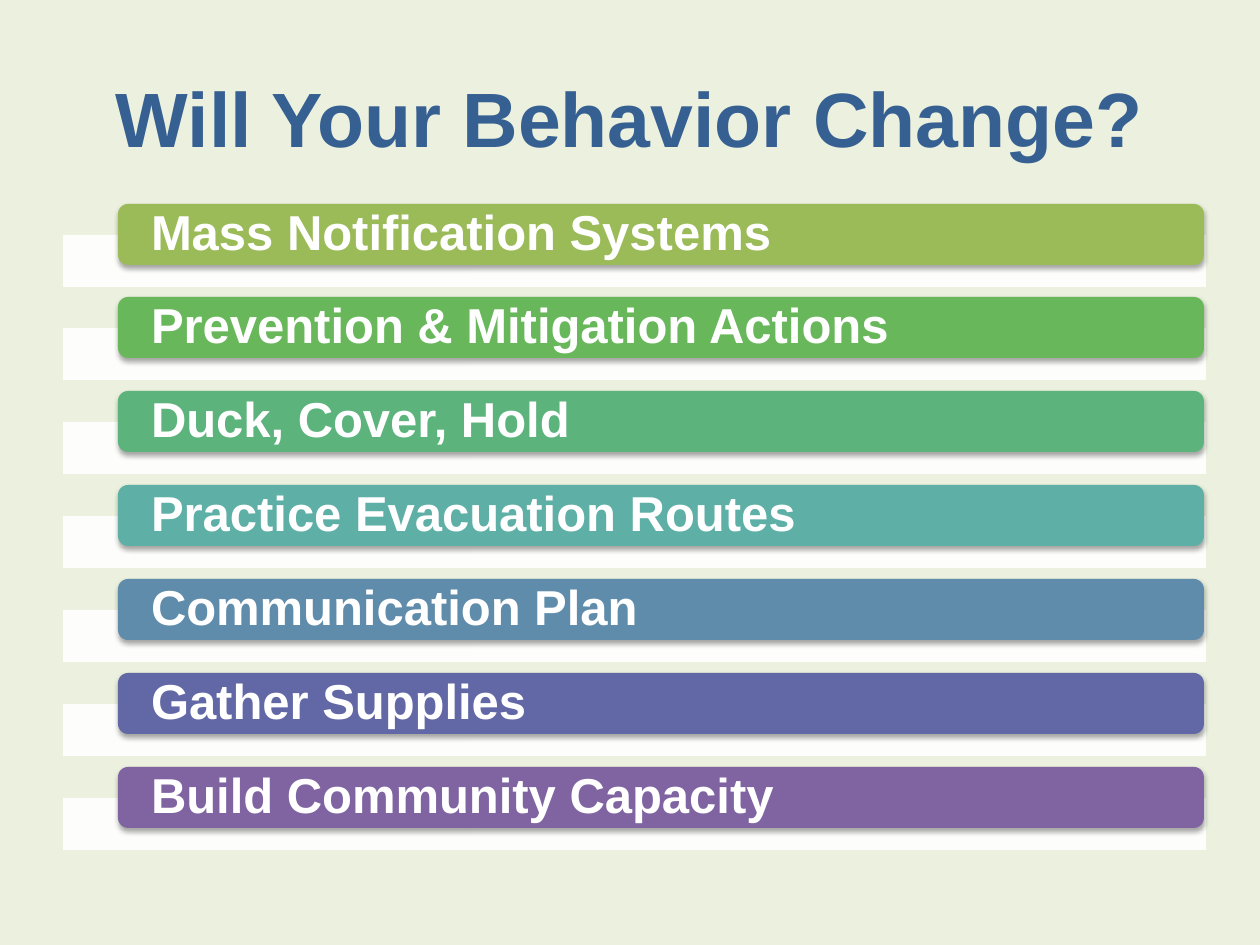
from lxml import etree
from pptx import Presentation
from pptx import util as u
from pptx.dml.color import RGBColor
from pptx.enum import shapes, text
from pptx.oxml import ns

PX = 914400 // 126
FONT = "Arial"
PAPER = RGBColor(0xEB, 0xF1, 0xDE)
NAVY = RGBColor(0x37, 0x60, 0x92)
WHITE = RGBColor(0xFF, 0xFF, 0xFF)
ACTIONS = [
    ("Mass Notification Systems", RGBColor(0x9B, 0xBB, 0x59)),
    ("Prevention & Mitigation Actions", RGBColor(0x69, 0xB7, 0x5B)),
    ("Duck, Cover, Hold", RGBColor(0x5C, 0xB3, 0x7C)),
    ("Practice Evacuation Routes", RGBColor(0x5E, 0xAF, 0xA6)),
    ("Communication Plan", RGBColor(0x60, 0x8C, 0xAB)),
    ("Gather Supplies", RGBColor(0x62, 0x67, 0xA6)),
    ("Build Community Capacity", RGBColor(0x80, 0x64, 0xA2)),
]
FIRST_TOP, LAST_TOP = 204, 767


def px(*lengths):
    return [u.Emu(length * PX) for length in lengths]


def add_span(para, words, size, color):
    span = para.add_run()
    span.text = words
    span.font.name = FONT
    span.font.size = u.Pt(size)
    span.font.bold = True
    span.font.color.rgb = color


def add_title(page, words):
    title = page.shapes.title
    title.left, title.top, title.width, title.height = px(63, 38, 1134, 157)
    title.text_frame.vertical_anchor = text.MSO_ANCHOR.MIDDLE
    para = title.text_frame.paragraphs[0]
    para.alignment = text.PP_ALIGN.CENTER
    add_span(para, words, 44, NAVY)


def add_block(group, kind, place, color):
    block = group.shapes.add_shape(kind, *px(*place))
    block.shadow.inherit = False
    block.fill.solid()
    block.fill.fore_color.rgb = color
    block.line.fill.background()
    return block


def set_alpha(color_element, percent):
    alpha = etree.SubElement(color_element, ns.qn("a:alpha"))
    alpha.set("val", str(percent * 1000))


def add_shadow(block):
    """Cast a soft black shadow straight down."""
    effects = block._element.spPr.find(ns.qn("a:effectLst"))
    shadow = etree.SubElement(
        effects, ns.qn("a:outerShdw"), blurRad=str(u.Pt(3.1)),
        dist=str(u.Pt(1.8)), dir="5400000", rotWithShape="0")
    black = etree.SubElement(shadow, ns.qn("a:srgbClr"), val="000000")
    set_alpha(black, 35)


def add_label(group, place, words):
    box = group.shapes.add_textbox(*px(*place))
    frame = box.text_frame
    frame.word_wrap = True
    frame.vertical_anchor = text.MSO_ANCHOR.MIDDLE
    frame.margin_left, frame.margin_right = px(30, 30)
    frame.margin_top = frame.margin_bottom = 0
    para = frame.paragraphs[0]
    para.line_spacing = 0.9
    add_span(para, words, 28, WHITE)


def add_action(group, top, words, color):
    """Add a white strip with a coloured bar and its label over it."""
    strip = add_block(group, shapes.MSO_SHAPE.RECTANGLE,
                      (63, top + 31, 1143, 52), WHITE)
    set_alpha(strip._element.spPr.find(".//" + ns.qn("a:srgbClr")), 90)
    bar = add_block(group, shapes.MSO_SHAPE.ROUNDED_RECTANGLE,
                    (118, top, 1086, 61), color)
    add_shadow(bar)
    add_label(group, (121, top + 3, 1080, 55), words)


def main():
    deck = Presentation()
    deck.slide_width, deck.slide_height = px(1260, 945)
    page = deck.slides.add_slide(deck.slide_layouts.get_by_name("Title Only"))
    page.background.fill.solid()
    page.background.fill.fore_color.rgb = PAPER

    add_title(page, "Will Your Behavior Change?")
    group = page.shapes.add_group_shape()
    for row, (words, color) in enumerate(ACTIONS):
        top = FIRST_TOP + row * (LAST_TOP - FIRST_TOP) // (len(ACTIONS) - 1)
        add_action(group, top, words, color)
    deck.save("out.pptx")


if __name__ == "__main__":
    main()
